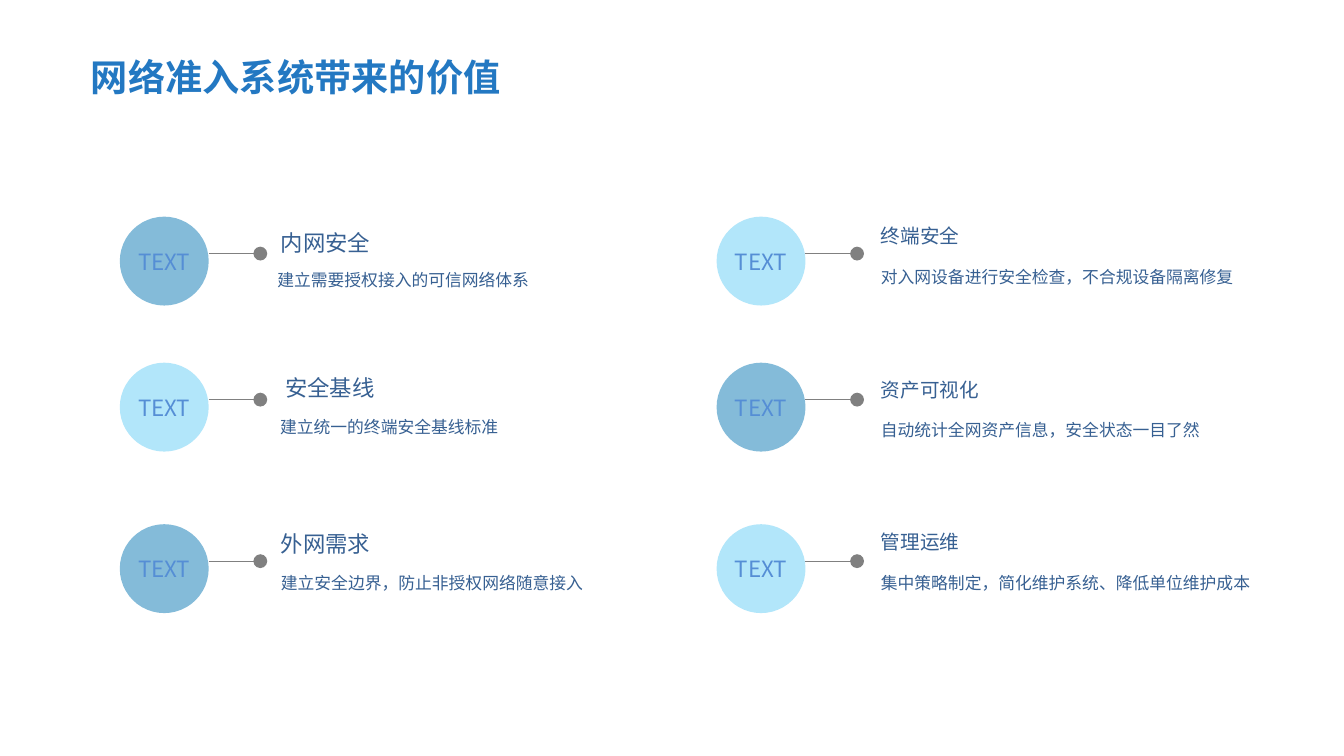
from dataclasses import dataclass

from lxml import etree
from pptx import Presentation
from pptx.dml.color import RGBColor
from pptx.enum.shapes import MSO_CONNECTOR, MSO_SHAPE
from pptx.enum.text import MSO_ANCHOR, MSO_AUTO_SIZE, PP_ALIGN
from pptx.oxml.ns import qn
from pptx.shapes.base import BaseShape
from pptx.slide import Slide
from pptx.text.text import TextFrame
from pptx.util import Cm, Pt

OVAL = MSO_SHAPE.OVAL
STRAIGHT = MSO_CONNECTOR.STRAIGHT
MIDDLE = MSO_ANCHOR.MIDDLE
GROW = MSO_AUTO_SIZE.SHAPE_TO_FIT_TEXT
FIXED = MSO_AUTO_SIZE.NONE
LEFT, CENTER = PP_ALIGN.LEFT, PP_ALIGN.CENTER

FONT = "Noto Sans CJK SC"
TITLE_BLUE = "2378C2"
LABEL_BLUE = "558ED5"
TEXT_BLUE = "376092"
LINE_GREY = "808080"
CIRCLE_FILLS = (("328FC1", 60), ("00AEEF", 30))

COLUMN_LEFTS = (3.02, 18.06)
ROW_TOPS = (5.46, 9.14, 13.21)
CIRCLE_SIZE = 2.24
LINE_DROP = 0.93
LINE_LENGTH = 1.3
TEXT_WIDTH = 9.86


@dataclass(frozen=True)
class Benefit:
    """One benefit with its grid cell and the places of its texts in cm."""

    column: int
    row: int
    heading: str
    heading_left: float
    heading_top: float
    heading_size: int
    detail: str
    detail_left: float
    detail_top: float


BENEFITS = (
    Benefit(0, 0, "内网安全", 6.83, 5.64, 16, "建立需要授权接入的可信网络体系", 6.74, 6.43),
    Benefit(0, 1, "安全基线", 6.94, 9.31, 16, "建立统一的终端安全基线标准", 6.81, 10.13),
    Benefit(0, 2, "外网需求", 6.83, 13.23, 16, "建立安全边界，防止非授权网络随意接入", 6.83, 14.05),
    Benefit(1, 0, "终端安全", 21.95, 5.53, 14, "对入网设备进行安全检查，不合规设备隔离修复", 21.95, 6.34),
    Benefit(1, 1, "资产可视化", 21.95, 9.39, 14, "自动统计全网资产信息，安全状态一目了然", 21.95, 10.19),
    Benefit(1, 2, "管理运维", 21.95, 13.23, 14, "集中策略制定，简化维护系统、降低单位维护成本", 21.95, 14.05),
)


def rgb(color: str) -> RGBColor:
    """Turn a hex string into a colour."""
    return RGBColor.from_string(color)


def write(frame: TextFrame, text: str, size: float, color: str, bold: bool = False) -> None:
    """Fill a text frame with one formatted paragraph."""
    frame.text = text
    run = frame.paragraphs[0].runs[0]
    run.font.name = FONT
    run.font.size = Pt(size)
    run.font.bold = bold
    run.font.color.rgb = rgb(color)
    east_asian = etree.SubElement(run.font._element, qn("a:ea"))
    east_asian.set("typeface", FONT)


def place(shape: BaseShape, left: float, top: float, width: float, height: float) -> None:
    """Set the position and size of a shape in cm."""
    shape.left, shape.top = Cm(left), Cm(top)
    shape.width, shape.height = Cm(width), Cm(height)


def add_title(slide: Slide, text: str) -> None:
    """Move and format the title placeholder."""
    title = slide.shapes.title
    place(title, 2.29, 1.37, 20, 1.14)
    frame = title.text_frame
    write(frame, text, 26.6, TITLE_BLUE, bold=True)
    frame.margin_left = frame.margin_right = frame.margin_top = frame.margin_bottom = 0
    frame.vertical_anchor = MIDDLE
    frame.auto_size = FIXED
    frame.paragraphs[0].alignment = LEFT


def add_circle(slide: Slide, left: float, top: float, color: str, opacity: int) -> None:
    """Draw a translucent labelled circle."""
    circle = slide.shapes.add_shape(OVAL, Cm(left), Cm(top), Cm(CIRCLE_SIZE), Cm(CIRCLE_SIZE))
    circle.shadow.inherit = False
    circle.fill.solid()
    circle.fill.fore_color.rgb = rgb(color)
    fill_color = circle._element.spPr.find(qn("a:solidFill"))[0]
    etree.SubElement(fill_color, qn("a:alpha")).set("val", str(opacity * 1000))
    circle.line.fill.background()
    frame = circle.text_frame
    write(frame, "TEXT", 16, LABEL_BLUE)
    frame.word_wrap = False
    frame.vertical_anchor = MIDDLE
    frame.paragraphs[0].alignment = CENTER


def add_pointer(slide: Slide, left: float, top: float) -> None:
    """Draw a horizontal line that ends in a dot."""
    pointer = slide.shapes.add_connector(
        STRAIGHT, Cm(left), Cm(top), Cm(left + LINE_LENGTH), Cm(top)
    )
    pointer.line.color.rgb = rgb(LINE_GREY)
    pointer.line.width = Pt(0.75)
    tail = etree.SubElement(pointer.line._get_or_add_ln(), qn("a:tailEnd"))
    tail.set("type", "oval")
    tail.set("w", "lg")
    tail.set("len", "lg")
    etree.SubElement(pointer._element.spPr, qn("a:effectLst"))


def add_text(slide: Slide, text: str, left: float, top: float, height: float, size: int) -> TextFrame:
    """Add a wrapping text box and return its frame."""
    box = slide.shapes.add_textbox(Cm(left), Cm(top), Cm(TEXT_WIDTH), Cm(height))
    frame = box.text_frame
    frame.word_wrap = True
    frame.auto_size = GROW
    write(frame, text, size, TEXT_BLUE)
    return frame


def add_benefit(slide: Slide, benefit: Benefit) -> None:
    """Draw the circle, pointer and texts of one benefit."""
    left, top = COLUMN_LEFTS[benefit.column], ROW_TOPS[benefit.row]
    color, opacity = CIRCLE_FILLS[(benefit.column + benefit.row) % 2]
    add_circle(slide, left, top, color, opacity)
    add_pointer(slide, left + CIRCLE_SIZE, top + LINE_DROP)
    detail = add_text(slide, benefit.detail, benefit.detail_left, benefit.detail_top, 1.02, 12)
    detail.paragraphs[0].line_spacing = 1.5
    detail.paragraphs[0].space_after = Pt(6)
    heading_height = 0.94 if benefit.heading_size == 16 else 0.86
    add_text(slide, benefit.heading, benefit.heading_left, benefit.heading_top,
             heading_height, benefit.heading_size)


def main() -> None:
    """Build the slide and save it."""
    presentation = Presentation()
    presentation.slide_width, presentation.slide_height = Cm(33.87), Cm(19.05)
    slide = presentation.slides.add_slide(presentation.slide_layouts[5])
    add_title(slide, "网络准入系统带来的价值")
    for benefit in BENEFITS:
        add_benefit(slide, benefit)
    presentation.save("out.pptx")


if __name__ == "__main__":
    main()
